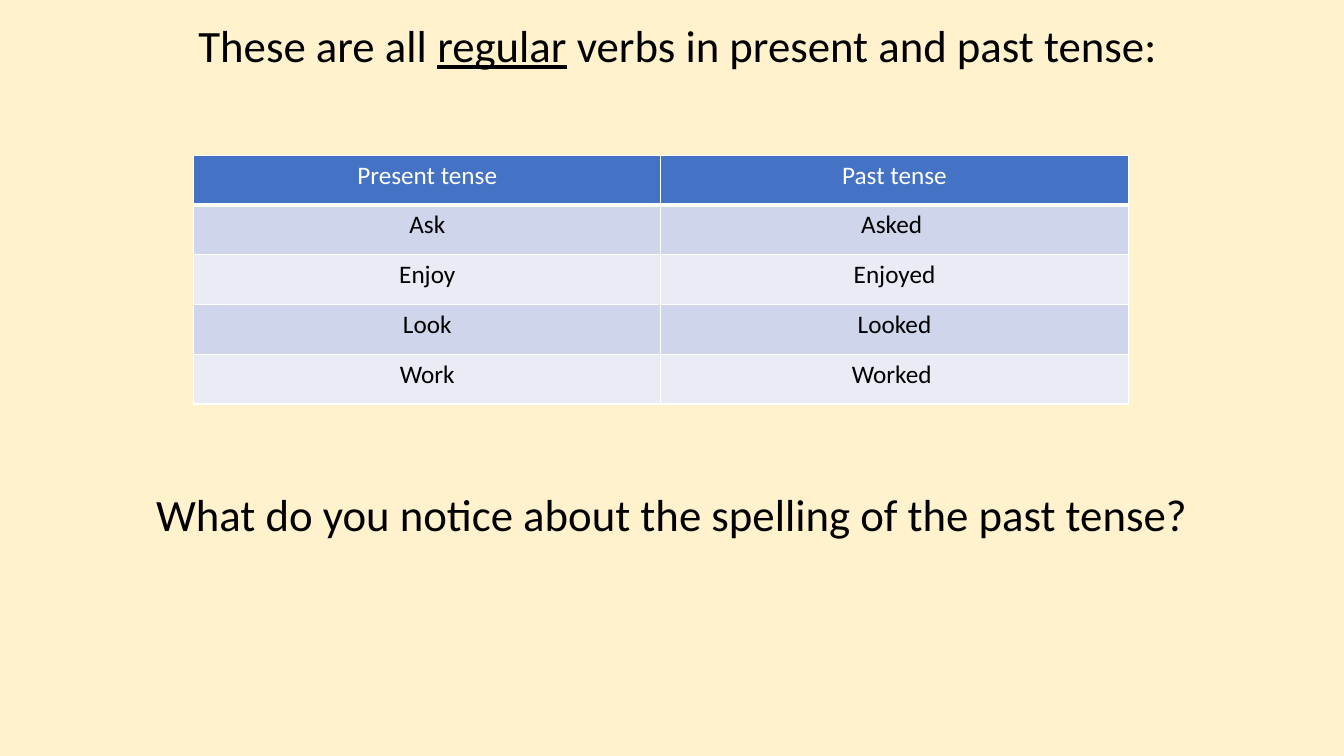
from dataclasses import dataclass

from lxml import etree
from pptx import Presentation
from pptx import util as u
from pptx.dml.color import RGBColor
from pptx.enum import text
from pptx.oxml import ns


@dataclass(frozen=True)
class Theme:
    font: str = "Calibri"
    background: str = "FFF2CC"
    ink: str = "000000"
    white: str = "FFFFFF"
    header: str = "4472C4"
    bands: tuple = ("CFD5EA", "E9EBF5")
    statement_size: int = 32
    table_size: int = 18
    rule: int = 1
    header_rule: int = 3


VERBS = [
    ("Present tense", "Past tense"),
    ("Ask", "Asked "),
    ("Enjoy", "Enjoyed"),
    ("Look", "Looked"),
    ("Work", "Worked "),
]


class SlideBuilder:
    def __init__(self, slide, theme):
        self.slide = slide
        self.theme = theme

    def background(self):
        fill = self.slide.background.fill
        fill.solid()
        fill.fore_color.rgb = RGBColor.from_string(self.theme.background)

    def fill_paragraph(self, paragraph, runs, size, color, **spacing):
        """Fill a centred paragraph from (wording, font format) pairs."""
        for name, value in {"alignment": text.PP_ALIGN.CENTER, **spacing}.items():
            setattr(paragraph, name, value)
        for wording, extra in runs:
            run = paragraph.add_run()
            run.text = wording
            style = {"name": self.theme.font, "size": u.Pt(size), "bold": False, **extra}
            for name, value in style.items():
                setattr(run.font, name, value)
            run.font.color.rgb = RGBColor.from_string(color)

    def statement(self, left, top, width, height, runs, **spacing):
        box = self.slide.shapes.add_textbox(*map(u.Cm, (left, top, width, height)))
        box.text_frame.word_wrap = True
        self.fill_paragraph(box.text_frame.paragraphs[0], runs,
                            self.theme.statement_size, self.theme.ink, **spacing)

    def borders(self, cell, widths):
        """Draw white cell edges; widths maps L, R, T, B (in that order) to points."""
        properties = cell._tc.get_or_add_tcPr()
        for side, points in widths.items():
            line = etree.SubElement(properties, ns.qn(f"a:ln{side}"), w=str(u.Pt(points)))
            fill = etree.SubElement(line, ns.qn("a:solidFill"))
            etree.SubElement(fill, ns.qn("a:srgbClr"), val=self.theme.white)

    def table(self, left, top, width, height, rows):
        theme = self.theme
        frame = self.slide.shapes.add_table(
            len(rows), len(rows[0]), *map(u.Cm, (left, top, width, height)))
        for row, words in enumerate(rows):
            fill = theme.bands[(row - 1) % 2] if row else theme.header
            color = theme.ink if row else theme.white
            for column, word in enumerate(words):
                cell = frame.table.cell(row, column)
                self.borders(cell, {
                    "L": theme.rule,
                    "R": theme.rule,
                    "T": theme.header_rule if row == 1 else theme.rule,
                    "B": theme.header_rule if row == 0 else theme.rule,
                })
                cell.fill.solid()
                cell.fill.fore_color.rgb = RGBColor.from_string(fill)
                self.fill_paragraph(cell.text_frame.paragraphs[0], [(word, {})],
                                    theme.table_size, color)


def main():
    presentation = Presentation()
    presentation.slide_width = u.Cm(33.87)
    presentation.slide_height = u.Cm(19.05)
    slide = presentation.slides.add_slide(presentation.slide_layouts[6])

    builder = SlideBuilder(slide, Theme())
    builder.background()
    builder.statement(
        0.53, 0.48, 33.1, 9.04,
        [("These are all ", {}),
         ("regular", {"underline": True}),
         (" verbs in present and past tense:", {})],
        line_spacing=0.9, space_before=u.Pt(10))
    builder.table(4.88, 3.91, 23.55, 6.27, VERBS)
    builder.statement(
        0.66, 12.14, 32.56, 1.63,
        [("What do you notice about the spelling of the past tense?", {})])

    presentation.save("out.pptx")


if __name__ == "__main__":
    main()
